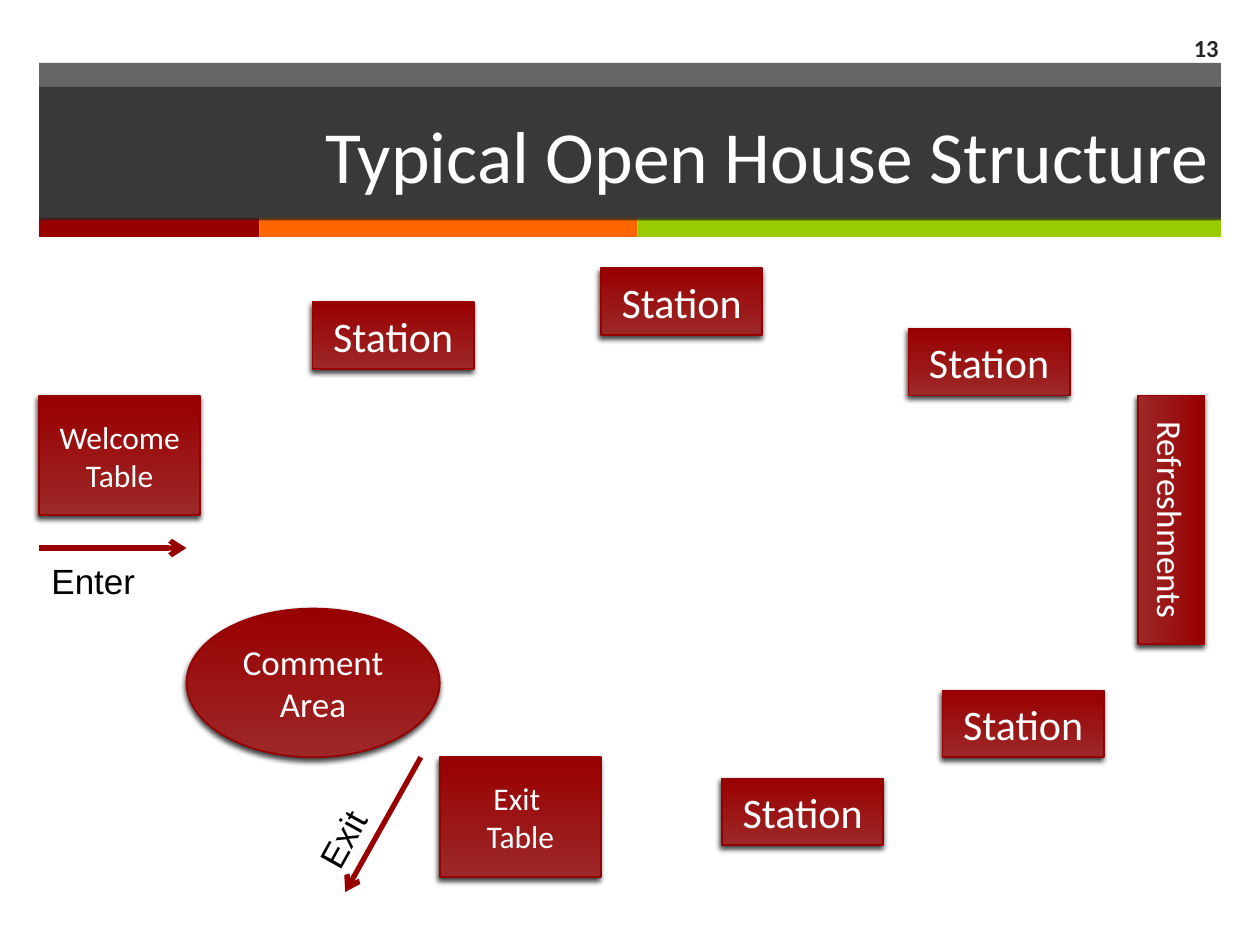
from lxml import etree
from pptx import Presentation
from pptx.dml.color import RGBColor
from pptx.enum.shapes import MSO_CONNECTOR, MSO_SHAPE
from pptx.enum.text import MSO_ANCHOR, PP_ALIGN
from pptx.oxml.ns import qn
from pptx.util import Inches, Pt

RECTANGLE, OVAL = MSO_SHAPE.RECTANGLE, MSO_SHAPE.OVAL
STRAIGHT = MSO_CONNECTOR.STRAIGHT
MIDDLE, TOP = MSO_ANCHOR.MIDDLE, MSO_ANCHOR.TOP
LEFT, CENTER, RIGHT = PP_ALIGN.LEFT, PP_ALIGN.CENTER, PP_ALIGN.RIGHT

DARK, WHITE, RED, ORANGE, GREEN = "262626", "FFFFFF", "990000", "FF6600", "99CC00"
STATION_SIZE = (1.28, 0.53)
TABLE_SIZE = (1.28, 0.95)
STATIONS = [(2.48, 2.4), (4.77, 2.13), (7.21, 2.61), (7.48, 5.48), (5.73, 6.18)]


def color(value):
    return RGBColor.from_string(value)


def add_child(parent, tag, **attributes):
    return etree.SubElement(parent, qn(tag), attributes)


def place(shape, box):
    shape.left, shape.top, shape.width, shape.height = map(Inches, box)


def write(shape, lines, size, ink, align=CENTER, font="Calibri", bold=False,
          anchor=MIDDLE, wrap=True):
    frame = shape.text_frame
    frame.word_wrap = wrap
    frame.vertical_anchor = anchor
    for index, line in enumerate(lines):
        para = frame.paragraphs[0] if index == 0 else frame.add_paragraph()
        para.alignment = align
        span = para.add_run()
        span.text = line
        span.font.size = Pt(size)
        span.font.name = font
        span.font.bold = bold
        span.font.color.rgb = color(ink)


def fill_solid(shape, value, opacity=100):
    shape.fill.solid()
    shape.fill.fore_color.rgb = color(value)
    if opacity < 100:
        tint = shape.element.spPr.find(".//" + qn("a:srgbClr"))
        add_child(tint, "a:alpha", val=str(opacity * 1000))


def add_bar(slide, box, value, opacity=100):
    bar = slide.shapes.add_shape(RECTANGLE, *map(Inches, box))
    bar.shadow.inherit = False
    bar.line.fill.background()
    fill_solid(bar, value, opacity)


def add_label(slide, box, text, size, rotation=0, **style):
    label = slide.shapes.add_textbox(*map(Inches, box))
    label.rotation = rotation
    write(label, [text], size, **style)


def add_header(slide, box):
    left, top, width, height = box
    add_bar(slide, box, DARK, 70)

    # Colour stripe along the bottom edge
    stripe_left = left
    for stripe_width, value in [(1.75, RED), (3, ORANGE), (4.63, GREEN)]:
        add_bar(slide, (stripe_left, top + height - 0.01, stripe_width, 0.15), value)
        stripe_left += stripe_width

    # Title, brought in front of the bars
    title = slide.shapes.title
    title.element.getparent().append(title.element)
    place(title, (left, top + 0.19, width, 1.06))
    fill_solid(title, DARK, 70)
    write(title, ["Typical Open House Structure"], 42, WHITE, RIGHT)

    # Page number above the band
    add_label(slide, (9.08, 0.18, 0.69, 0.39), "13", 14,
              ink=DARK, align=RIGHT, bold=True)


def add_area(slide, box, lines, size, preset=RECTANGLE, rotation=0):
    area = slide.shapes.add_shape(preset, *map(Inches, box))
    area.rotation = rotation
    area.fill.gradient()
    area.fill.gradient_angle = 90
    for stop, value in zip(area.fill.gradient_stops, ("9D2828", RED)):
        stop.color.rgb = color(value)
    area.line.color.rgb = color("960000")
    area.line.width = Pt(1)

    # Soft shadow below the shape
    area.shadow.inherit = False
    effects = area.element.spPr.find(qn("a:effectLst"))
    shadow = add_child(effects, "a:outerShdw", blurRad=str(Pt(3)), dist=str(Pt(2)),
                       dir=str(110 * 60000), rotWithShape="0")
    add_child(add_child(shadow, "a:srgbClr", val="000000"), "a:alpha", val="75000")
    write(area, lines, size, WHITE)


def add_arrow(slide, start, end):
    arrow = slide.shapes.add_connector(STRAIGHT, *map(Inches, start + end))
    arrow.line.color.rgb = color(RED)
    arrow.line.width = Pt(3)
    add_child(arrow.line._get_or_add_ln(), "a:tailEnd", type="arrow")
    add_child(arrow.element.spPr, "a:effectLst")


def add_floor_plan(slide):
    # Stations around the room
    for position in STATIONS:
        add_area(slide, position + STATION_SIZE, ["Station"], 24)

    # Tables and service areas
    add_area(slide, (0.31, 3.14) + TABLE_SIZE, ["Welcome Table"], 18)
    add_area(slide, (8.31, 3.86, 1.97, 0.53), ["Refreshments"], 20, rotation=90)
    add_area(slide, (1.48, 4.83, 2.01, 1.18), ["Comment Area"], 20, OVAL)
    add_area(slide, (3.49, 6.01) + TABLE_SIZE, ["Exit ", "Table"], 18)

    # Ways in and out
    add_arrow(slide, (0.31, 4.35), (1.48, 4.35))
    add_arrow(slide, (3.34, 6.01), (2.74, 7.08))
    style = dict(ink="000000", align=LEFT, font="Arial", anchor=TOP)
    add_label(slide, (0.31, 4.39, 1.17, 0.44), "Enter", 20, **style)
    add_label(slide, (2.36, 6.39, 0.77, 0.44), "Exit", 20, rotation=299, **style)


def main():
    deck = Presentation()
    deck.slide_width, deck.slide_height = Inches(10), Inches(7.5)
    page = deck.slides.add_slide(deck.slide_layouts[5])
    add_header(page, (0.31, 0.5, 9.38, 1.24))
    add_floor_plan(page)
    deck.save("out.pptx")


if __name__ == "__main__":
    main()
